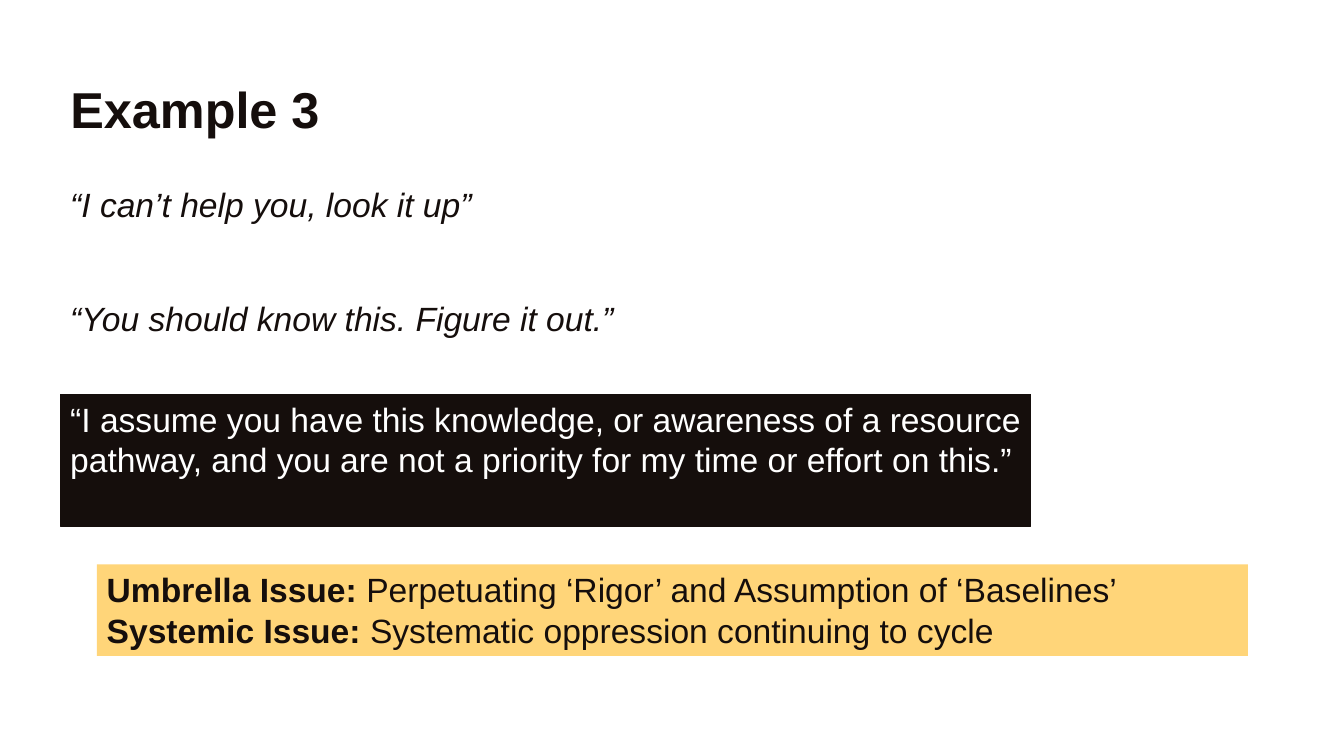
from pptx import Presentation
from pptx.dml.color import RGBColor
from pptx.enum.shapes import MSO_SHAPE as Shape
from pptx.enum.text import MSO_ANCHOR as Anchor, PP_ALIGN as Align
from pptx.util import Cm, Pt

INK = RGBColor(0x15, 0x0E, 0x0C)
WHITE = RGBColor(0xFF, 0xFF, 0xFF)
GOLD = RGBColor(0xFF, 0xD5, 0x79)
FONT = "Arial"
LEFT = 1.52

QUOTES = ["“I can’t help you, look it up”", "“You should know this. Figure it out.”"]
MEANING = ("“I assume you have this knowledge, or awareness of a resource pathway, "
           "and you are not a priority for my time or effort on this.”")
ISSUES = [
    ("Umbrella Issue: ", "Perpetuating ‘Rigor’ and Assumption of ‘Baselines’"),
    ("Systemic Issue: ", "Systematic oppression continuing to cycle"),
]


def style_paragraph(para, size, color):
    para.alignment = Align.LEFT
    para.font.name = FONT
    para.font.size = Pt(size)
    para.font.color.rgb = color


def add_title(page, text, left, top, width, height):
    title = page.shapes.title
    title.left, title.top, title.width, title.height = map(Cm, (left, top, width, height))
    frame = title.text_frame
    frame.text = text
    frame.word_wrap = False
    frame.vertical_anchor = Anchor.MIDDLE
    para = frame.paragraphs[0]
    style_paragraph(para, 36, INK)
    para.font.bold = True


def add_panel(page, fill, left, top, width, height):
    box = page.shapes.add_shape(Shape.RECTANGLE, *map(Cm, (left, top, width, height)))
    box.shadow.inherit = False
    box.fill.solid()
    box.fill.fore_color.rgb = fill
    box.line.fill.background()
    box.text_frame.word_wrap = True
    box.text_frame.vertical_anchor = Anchor.TOP
    return box


def add_quote(page, text, left, top, width, height):
    box = add_panel(page, WHITE, left, top, width, height)
    para = box.text_frame.paragraphs[0]
    para.text = text
    style_paragraph(para, 24, INK)
    para.font.italic = True


def add_meaning(page, text, left, top, width, height):
    box = add_panel(page, INK, left, top, width, height)
    box.line.color.rgb = INK
    box.line.width = Pt(0.75)
    box.text_frame.margin_right = Cm(0.2)
    para = box.text_frame.paragraphs[0]
    para.text = text
    style_paragraph(para, 24, WHITE)


def add_issues(page, issues, left, top, width, height):
    frame = add_panel(page, GOLD, left, top, width, height).text_frame
    for index, (label, text) in enumerate(issues):
        para = frame.add_paragraph() if index else frame.paragraphs[0]
        style_paragraph(para, 24, INK)
        span = para.add_run()
        span.text = label
        span.font.bold = True
        para.add_run().text = text


def main():
    deck = Presentation()
    deck.slide_width, deck.slide_height = Cm(33.87), Cm(19.05)
    page = deck.slides.add_slide(deck.slide_layouts.get_by_name("Title Only"))
    add_title(page, "Example 3", LEFT, 1.83, 6.86, 1.8)
    for index, quote in enumerate(QUOTES):
        add_quote(page, quote, LEFT, 4.5 + index * 2.87, 31.22, 1.27)
    add_meaning(page, MEANING, LEFT, 9.93, 24.46, 3.33)
    add_issues(page, ISSUES, 2.44, 14.22, 29.01, 2.31)
    deck.save("out.pptx")


if __name__ == "__main__":
    main()
